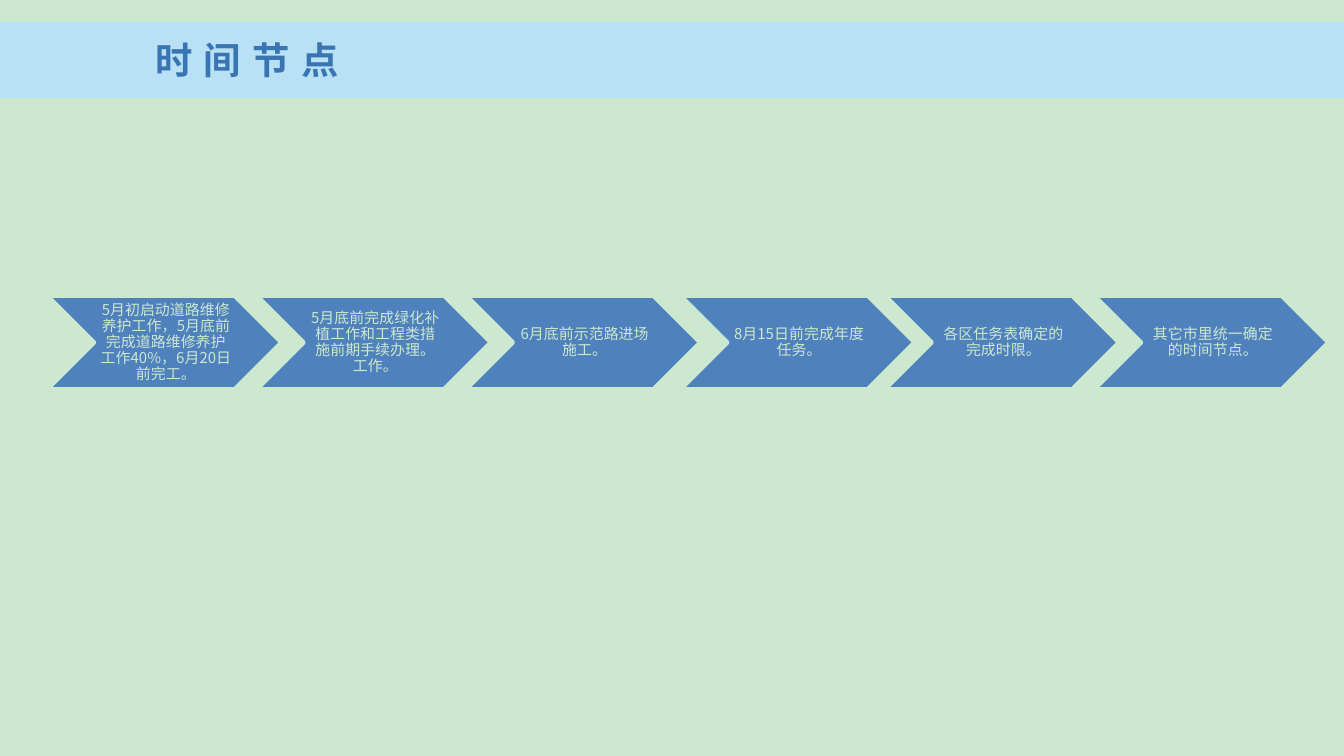
from lxml import etree
from pptx import Presentation
from pptx.dml.color import RGBColor
from pptx.enum.shapes import MSO_SHAPE
from pptx.enum.text import MSO_ANCHOR, MSO_AUTO_SIZE, PP_ALIGN
from pptx.oxml.ns import qn
from pptx.util import Emu, Pt

RECTANGLE, CHEVRON = MSO_SHAPE.RECTANGLE, MSO_SHAPE.CHEVRON
MIDDLE, CENTER = MSO_ANCHOR.MIDDLE, PP_ALIGN.CENTER
GROW = MSO_AUTO_SIZE.SHAPE_TO_FIT_TEXT

TITLE = "时间节点"
# (text, shift to the right in px from the even spacing)
MILESTONES = [
    ("5月初启动道路维修养护工作，5月底前完成道路维修养护工作40%，6月20日前完工。", 0),
    ("5月底前完成绿化补植工作和工程类措施前期手续办理。工作。", 0),
    ("6月底前示范路进场施工。", 0),
    ("8月15日前完成年度任务。", 5),
    ("各区任务表确定的完成时限。", 0),
    ("其它市里统一确定的时间节点。", 0),
]

FONT = "Noto Sans CJK SC"
PALE_GREEN, BLUE = "CCE8CF", "4F81BD"
BAND_BLUE, TITLE_BLUE = "B9E1F5", "3975B2"
SLIDE_W, SLIDE_H = 1344, 756
FIRST_LEFT, LAST_LEFT = 48, 1095
ARROW_TOP, ARROW_W, ARROW_H = 296, 233, 93
LABEL_INDENT, LABEL_W = 46, 140


def px(length):
    return Emu(round(length * 914400 / 134.4))


def color(hex_string):
    return RGBColor.from_string(hex_string)


def add_filled_shape(slide, preset, box, fill):
    shape = slide.shapes.add_shape(preset, *map(px, box))
    shape.shadow.inherit = False
    shape.fill.solid()
    shape.fill.fore_color.rgb = color(fill)
    shape.line.fill.background()
    return shape


def add_text(slide, box, text, size, text_color):
    """Add a text box and return its frame and paragraph."""
    frame = slide.shapes.add_textbox(*map(px, box)).text_frame
    paragraph = frame.paragraphs[0]
    paragraph.text = text
    font = paragraph.font
    font.size = Pt(size)
    font.color.rgb = color(text_color)
    font.name = FONT
    properties = paragraph._p.pPr.find(qn("a:defRPr"))
    etree.SubElement(properties, qn("a:ea"), typeface=FONT)
    return frame, paragraph


def add_title(slide):
    add_filled_shape(slide, RECTANGLE, (0, 22, SLIDE_W, 76), BAND_BLUE)
    frame, paragraph = add_text(slide, (142, 31, 223, 59), TITLE, 20, TITLE_BLUE)
    frame.word_wrap = False
    frame.auto_size = GROW
    paragraph.font.bold = True
    paragraph._p.pPr.find(qn("a:defRPr")).set("spc", "600")


def add_milestone(slide, left, text):
    arrow = add_filled_shape(
        slide, CHEVRON, (left, ARROW_TOP, ARROW_W, ARROW_H), BLUE)
    arrow.line.color.rgb = color(PALE_GREEN)
    arrow.line.width = Pt(2)

    label_box = (left + LABEL_INDENT, ARROW_TOP, LABEL_W, ARROW_H)
    frame, paragraph = add_text(slide, label_box, text, 8, PALE_GREEN)
    frame.word_wrap = True
    frame.vertical_anchor = MIDDLE
    frame.margin_left = px(5)
    frame.margin_top = frame.margin_right = frame.margin_bottom = px(1)
    paragraph.alignment = CENTER
    paragraph.line_spacing = 0.9


def main():
    deck = Presentation()
    deck.slide_width, deck.slide_height = px(SLIDE_W), px(SLIDE_H)
    slide = deck.slides.add_slide(deck.slide_layouts[6])
    slide.background.fill.solid()
    slide.background.fill.fore_color.rgb = color(PALE_GREEN)

    add_title(slide)
    step = (LAST_LEFT - FIRST_LEFT) / (len(MILESTONES) - 1)
    for index, (text, shift) in enumerate(MILESTONES):
        add_milestone(slide, FIRST_LEFT + index * step + shift, text)
    deck.save("out.pptx")


if __name__ == "__main__":
    main()
